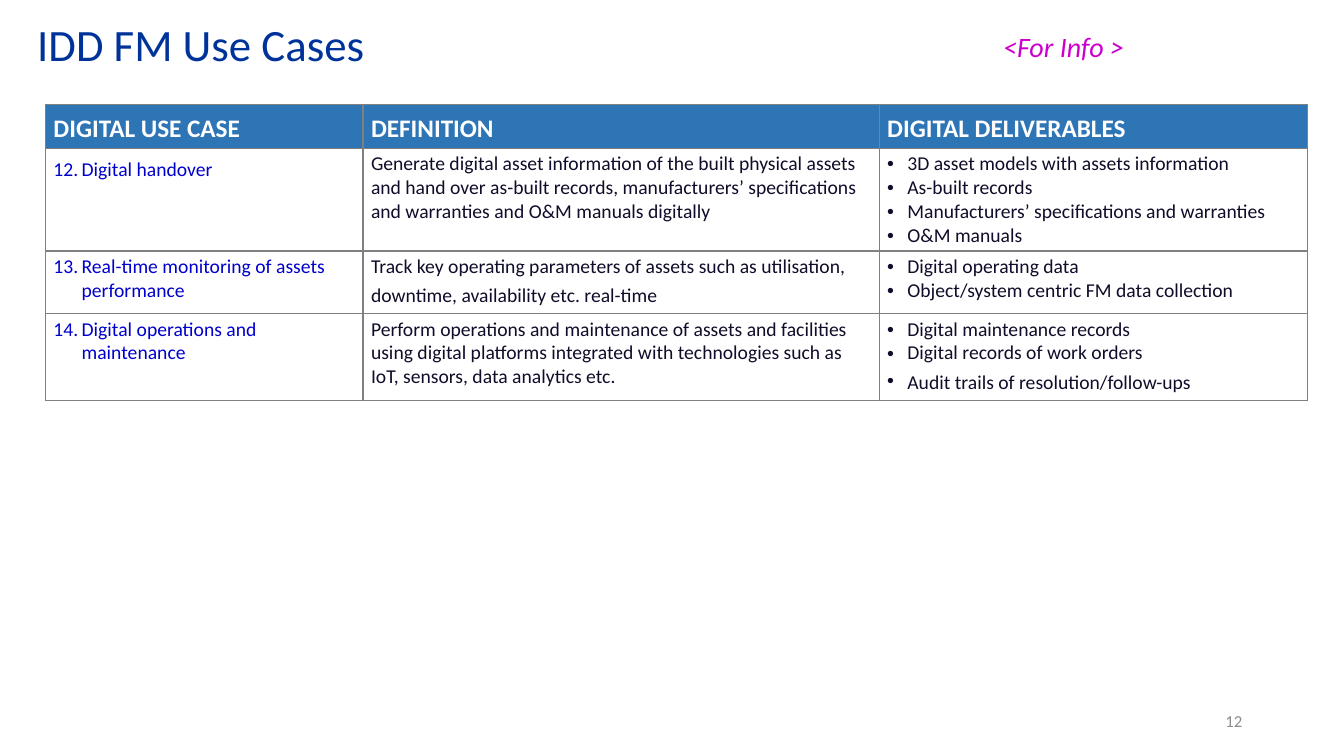
from lxml import etree
from pptx import Presentation
from pptx.dml.color import RGBColor
from pptx.enum import text
from pptx.oxml.ns import qn
from pptx.util import Inches, Pt

COLORS = {
    "title": "003399", "note": "CC00CC", "number": "8C8C8C",
    "header": "2E75B6", "white": "FFFFFF", "border": "808080",
    "case": "0000CC", "body": "0F0D29",
}
COLUMN_WIDTHS = [3.15, 5.12, 4.25]
ROW_HEIGHTS = [0.43, 1.02, 0.62, 0.86]
HEADINGS = ["DIGITAL USE CASE", "DEFINITION", "DIGITAL DELIVERABLES"]
FIRST_NUMBER = 12
# A closing tab marks a paragraph whose last line is taller.
USE_CASES = [
    ("Digital handover \t",
     "Generate digital asset information of the built physical assets and hand over "
     "as-built records, manufacturers’ specifications and warranties and O&M manuals digitally",
     ["3D asset models with assets information", "As-built records",
      "Manufacturers’ specifications and warranties", "O&M manuals"]),
    ("Real-time monitoring of assets performance",
     "Track key operating parameters of assets such as utilisation, downtime, "
     "availability etc. real-time \t",
     ["Digital operating data", "Object/system centric FM data collection"]),
    ("Digital operations and maintenance",
     "Perform operations and maintenance of assets and facilities using digital platforms "
     "integrated with technologies such as IoT, sensors, data analytics etc.",
     ["Digital maintenance records", "Digital records of work orders",
      "Audit trails of resolution/follow-ups \t"]),
]


def add_run(paragraph, words, size, color, bold=False, italic=False):
    run = paragraph.add_run()
    run.text = words
    font = run.font
    font.name, font.size, font.bold, font.italic = "Calibri", Pt(size), bold, italic
    font.color.rgb = RGBColor.from_string(COLORS[color])


def add_label(slide, box, words, size, color, italic=False, wrap=True,
              anchor=text.MSO_ANCHOR.MIDDLE, align=text.PP_ALIGN.LEFT, spacing=1.0):
    frame = slide.shapes.add_textbox(*map(Inches, box)).text_frame
    frame.word_wrap = wrap
    frame.vertical_anchor = anchor
    paragraph = frame.paragraphs[0]
    paragraph.alignment = align
    paragraph.line_spacing = spacing
    add_run(paragraph, words, size, color, italic=italic)


def set_marker(paragraph, indent, tag, **attributes):
    """Give the paragraph a hanging indent and a bullet or number."""
    properties = paragraph._p.get_or_add_pPr()
    properties.set("marL", str(Inches(indent)))
    properties.set("indent", str(-Inches(indent)))
    if tag == "a:buChar":
        etree.SubElement(properties, qn("a:buFont"), typeface="Arial")
    etree.SubElement(properties, qn(tag), **attributes)


def style_cell(cell, fill):
    cell.margin_left = cell.margin_right = Inches(0.08)
    cell.margin_top = cell.margin_bottom = Inches(0.04)
    cell.fill.solid()
    cell.fill.fore_color.rgb = RGBColor.from_string(COLORS[fill])
    properties = cell._tc.get_or_add_tcPr()
    for position, side in enumerate(["lnL", "lnR", "lnT", "lnB"]):
        line = etree.Element(qn("a:" + side), w=str(Pt(1)))
        solid = etree.SubElement(line, qn("a:solidFill"))
        etree.SubElement(solid, qn("a:srgbClr"), val=COLORS["border"])
        properties.insert(position, line)


def fill_cell(cell, lines, color):
    """Write one paragraph per line and return the paragraphs."""
    style_cell(cell, "white")
    frame = cell.text_frame
    for index, line in enumerate(lines):
        paragraph = frame.add_paragraph() if index else frame.paragraphs[0]
        add_run(paragraph, line.rstrip("\t"), 14, color)
        if line.endswith("\t"):
            add_run(paragraph, "\t", 18, color)
    return frame.paragraphs


def add_use_case_table(slide):
    frame = slide.shapes.add_table(
        len(ROW_HEIGHTS), len(COLUMN_WIDTHS), Inches(0.45), Inches(1.04),
        Inches(sum(COLUMN_WIDTHS)), Inches(sum(ROW_HEIGHTS)))
    table = frame.table
    table.horz_banding = False
    for column, width in zip(table.columns, COLUMN_WIDTHS):
        column.width = Inches(width)
    for row, height in zip(table.rows, ROW_HEIGHTS):
        row.height = Inches(height)

    for column, heading in enumerate(HEADINGS):
        cell = table.cell(0, column)
        style_cell(cell, "header")
        paragraph = cell.text_frame.paragraphs[0]
        paragraph.line_spacing = 1.15
        add_run(paragraph, heading, 18, "white", bold=True)

    for row, (name, definition, deliverables) in enumerate(USE_CASES, 1):
        number = str(FIRST_NUMBER + row - 1)
        for paragraph in fill_cell(table.cell(row, 0), [name], "case"):
            set_marker(paragraph, 0.28, "a:buAutoNum", type="arabicPeriod", startAt=number)
        fill_cell(table.cell(row, 1), [definition], "body")
        for paragraph in fill_cell(table.cell(row, 2), deliverables, "body"):
            set_marker(paragraph, 0.2, "a:buChar", char="•")


def main():
    presentation = Presentation()
    presentation.slide_width = Inches(13.33)
    presentation.slide_height = Inches(7.5)
    slide = presentation.slides.add_slide(presentation.slide_layouts[6])
    add_label(slide, (9.42, 6.95, 3, 0.4), "12", 12, "number",
              align=text.PP_ALIGN.RIGHT)
    add_label(slide, (0.27, 0.07, 12.75, 0.79), "IDD FM Use Cases", 32, "title",
              spacing=0.9)
    add_use_case_table(slide)
    add_label(slide, (9.85, 0.24, 1.41, 0.44), "<For Info >", 20, "note",
              italic=True, wrap=False, anchor=text.MSO_ANCHOR.TOP)
    presentation.save("out.pptx")


if __name__ == "__main__":
    main()
